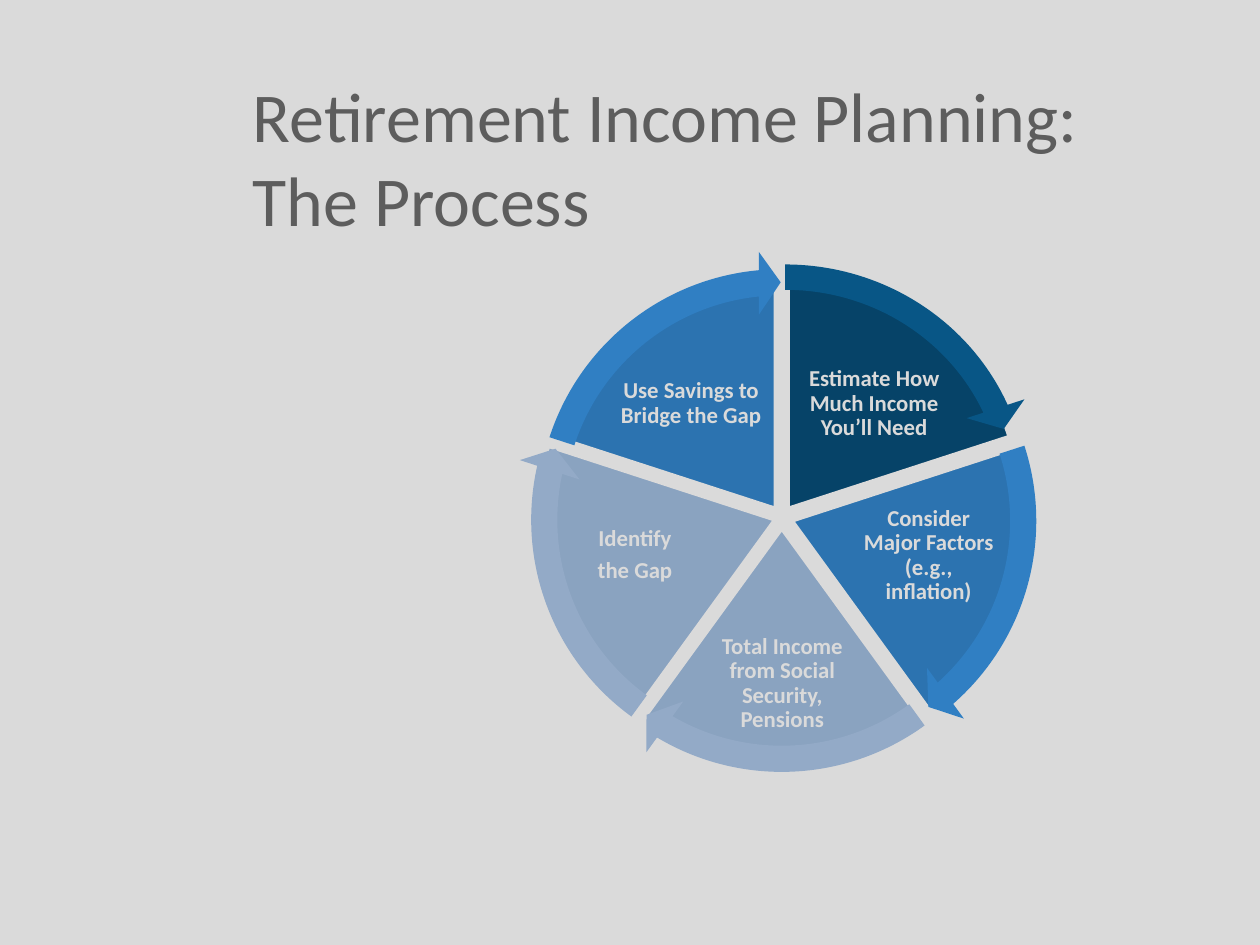
import pptx
import pptx.util
import pptx.dml.color
import pptx.enum.shapes
import pptx.enum.text

Cm, Pt = pptx.util.Cm, pptx.util.Pt
Kind = pptx.enum.shapes.MSO_SHAPE
Align = pptx.enum.text.PP_ALIGN

HUES = {
    "back": "DADADA", "title": "5D5D5D",
    "navy": "064368", "navy_rim": "085686",
    "blue": "2C73B0", "blue_rim": "307FC3",
    "pale": "8AA3C0", "pale_rim": "93AAC7",
}
FULL, TOP = 216, 162
STEP = FULL / 5
HEAD = 3.27

PIE, RIM = (9.37, 9.37), (10.54, 10.54)
PARTS = [
    {"hue": "navy", "pie": (0.09, -0.19, *PIE), "rim": (0.03, -0.36, 10.52, 10.21),
     "label": (1.82, -2.3, 3.02, 2.01), "lines": ["Estimate How Much Income You’ll Need"]},
    {"hue": "blue", "pie": (0.17, 0.06, *PIE), "rim": (0.19, 0.06, *RIM),
     "label": (2.92, 0.76, 2.79, 2.24), "lines": ["Consider Major Factors (e.g., inflation)"]},
    {"hue": "pale", "pie": (-0.04, 0.22, *PIE), "rim": (-0.04, 0.22, *RIM),
     "label": (-0.03, 3.34, 2.69, 2.46), "lines": ["Total Income from Social Security, Pensions"]},
    {"hue": "pale", "pie": (-0.18, 0.04, 9.6, 9.52), "rim": (-0.19, 0.04, *RIM),
     "label": (-3, 0.75, 2.84, 2.26), "lines": ["Identify", "the Gap"]},
    {"hue": "blue", "pie": (-0.17, -0.19, *PIE), "rim": (-0.06, -0.11, *RIM),
     "label": (-1.87, -2.3, 3.02, 2.01), "lines": ["Use Savings to Bridge the Gap"]},
]


def tint(name):
    return pptx.dml.color.RGBColor.from_string(HUES[name])


def place(mid, spot):
    x, y, wide, high = spot
    return [Cm(n) for n in (mid[0] + x - wide / 2, mid[1] + y - high / 2, wide, high)]


def add_run(para, text, size, hue, bold=False):
    run = para.add_run()
    run.text = text
    run.font.name = "Calibri"
    run.font.size = Pt(size)
    run.font.bold = bold
    run.font.color.rgb = tint(hue)


def add_box(slide, area, inset=None):
    frame = slide.shapes.add_textbox(*area).text_frame
    frame.word_wrap = True
    frame.vertical_anchor = pptx.enum.text.MSO_ANCHOR.MIDDLE
    if inset is not None:
        frame.margin_left = frame.margin_right = inset
        frame.margin_top = frame.margin_bottom = inset
    return frame


def add_form(slide, kind, area, hue, turns):
    form = slide.shapes.add_shape(kind, *area)
    form.shadow.inherit = False
    form.fill.solid()
    form.fill.fore_color.rgb = tint(hue)
    form.line.fill.background()
    for i, turn in enumerate(turns):
        form.adjustments[i] = turn
    return form


def add_title(slide, left, top, wide, high):
    frame = add_box(slide, [Cm(n) for n in (left, top, wide, high)])
    para = frame.paragraphs[0]
    add_run(para, "Retirement Income Planning:", 40, "title")
    para.add_line_break()
    add_run(para, "The Process", 40, "title")


def add_label(slide, area, lines):
    frame = add_box(slide, area, Cm(0.05))
    for i, line in enumerate(lines):
        para = frame.add_paragraph() if i else frame.paragraphs[0]
        para.alignment = Align.CENTER
        para.line_spacing = 0.9
        para.space_after = Pt(4.55)
        add_run(para, line, 13, "back", True)


def add_wheel(slide, left, top, side):
    mid = (left + side / 2, top + side / 2)
    for i, part in enumerate(PARTS):
        start, end = [(TOP + STEP * n) % FULL for n in (i, i + 1)]
        pie = add_form(slide, Kind.PIE, place(mid, part["pie"]), part["hue"], (start, end))
        pie.line.color.rgb = tint("back")
        pie.line.width = Pt(2)
        add_label(slide, place(mid, part["label"]), part["lines"])
    for i, part in enumerate(PARTS):
        start, end = [(TOP + STEP * n) % FULL for n in (i, i + 1)]
        add_form(slide, Kind.CIRCULAR_ARROW, place(mid, part["rim"]),
                 part["hue"] + "_rim", (0.05, HEAD, end - HEAD, start, 0.06))


def main():
    deck = pptx.Presentation()
    deck.slide_width, deck.slide_height = Cm(25.4), Cm(19.05)
    slide = deck.slides.add_slide(deck.slide_layouts[6])
    slide.background.fill.solid()
    slide.background.fill.fore_color.rgb = tint("back")
    add_title(slide, 4.85, 1.47, 20.55, 3.38)
    add_wheel(slide, 10.34, 4.98, 10.92)
    deck.save("out.pptx")


if __name__ == "__main__":
    main()
